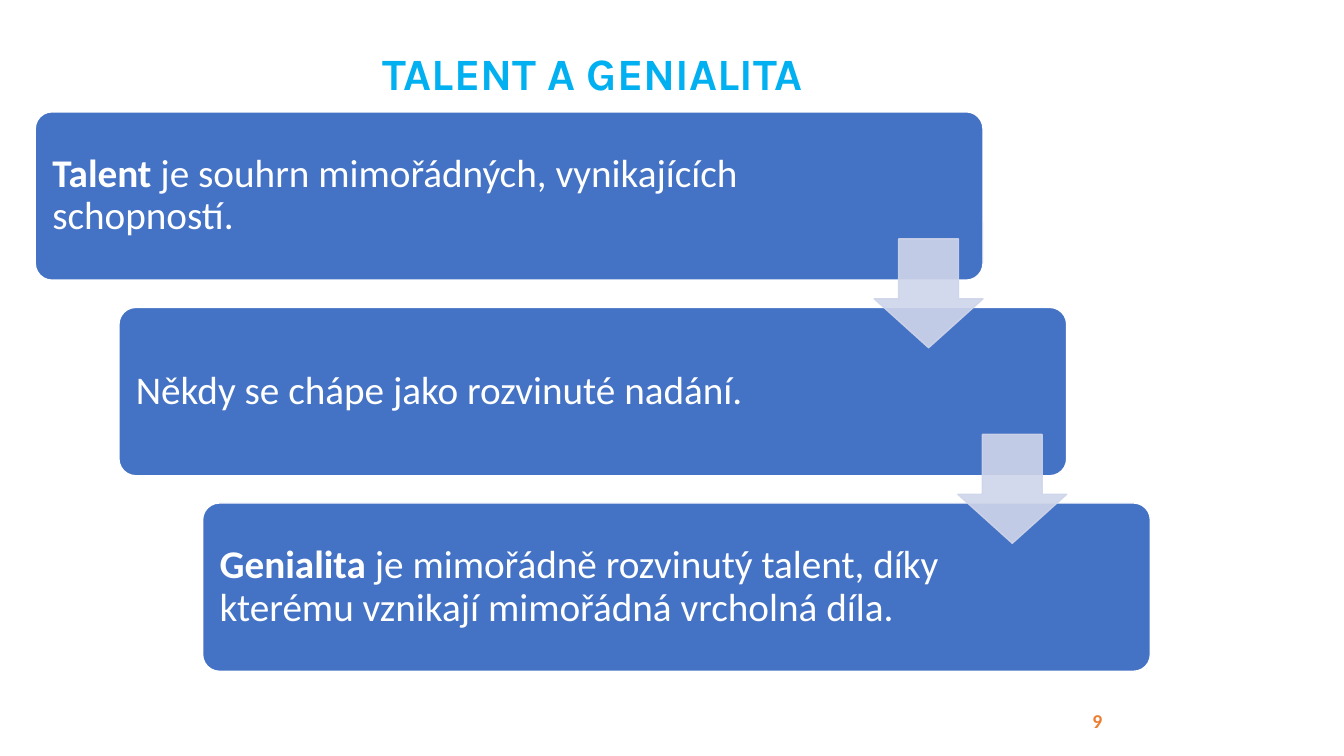
from dataclasses import dataclass

from lxml.etree import SubElement
from pptx import Presentation
from pptx.dml.color import RGBColor
from pptx.enum.shapes import MSO_SHAPE
from pptx.enum.text import MSO_ANCHOR, PP_ALIGN
from pptx.oxml.ns import qn
from pptx.util import Inches, Pt


@dataclass(frozen=True)
class Theme:
    heading_font: str = "Karla"
    body_font: str = "Calibri"
    heading: str = "00B0F0"
    step: str = "4472C4"
    arrow: str = "CFD5EA"
    light: str = "FFFFFF"
    accent: str = "ED7D31"
    heading_size: int = 32
    body_size: int = 28
    number_size: int = 14


class StaircaseSlide:
    def __init__(self, deck, theme):
        self.theme = theme
        self.page = deck.slides.add_slide(deck.slide_layouts[5])

    def add_span(self, para, text, font, size, color, bold=False):
        span = para.add_run()
        span.text = text
        span.font.name = font
        span.font.size = Pt(size)
        span.font.bold = bold
        span.font.color.rgb = RGBColor.from_string(color)

    def add_title(self, text, left, top, width, height):
        title = self.page.shapes.title
        title.left, title.top = Inches(left), Inches(top)
        title.width, title.height = Inches(width), Inches(height)
        title.text_frame.vertical_anchor = MSO_ANCHOR.MIDDLE
        para = title.text_frame.paragraphs[0]
        para.alignment = PP_ALIGN.CENTER
        para.line_spacing = 0.9
        self.add_span(para, text, self.theme.heading_font,
                      self.theme.heading_size, self.theme.heading, True)

    def add_block(self, kind, left, top, width, height, adjustments, fill, line):
        block = self.page.shapes.add_shape(
            kind, Inches(left), Inches(top), Inches(width), Inches(height))
        for index, value in enumerate(adjustments):
            block.adjustments[index] = value
        block.shadow.inherit = False
        block.fill.solid()
        block.fill.fore_color.rgb = RGBColor.from_string(fill)
        block.line.color.rgb = RGBColor.from_string(line)
        block.line.width = Pt(1)
        return block

    def add_step(self, spans, left, top, width, height):
        step = self.add_block(MSO_SHAPE.ROUNDED_RECTANGLE, left, top, width, height,
                              [0.1], self.theme.step, self.theme.light)
        frame = step.text_frame
        frame.word_wrap = True
        frame.vertical_anchor = MSO_ANCHOR.MIDDLE
        frame.margin_left, frame.margin_right = Inches(0.12), Inches(1.95)
        para = frame.paragraphs[0]
        para.alignment = PP_ALIGN.LEFT
        para.line_spacing = 0.9
        for text, bold in spans:
            self.add_span(para, text, self.theme.body_font,
                          self.theme.body_size, self.theme.light, bold)

    def add_arrow(self, left, top, size):
        """Draw a down arrow, 90 % opaque in fill and outline."""
        arrow = self.add_block(MSO_SHAPE.DOWN_ARROW, left, top, size, size,
                               [0.55, 0.45], self.theme.arrow, self.theme.arrow)
        for color in arrow.element.spPr.iter(qn("a:srgbClr")):
            SubElement(color, qn("a:alpha"), val="90000")

    def add_page_number(self, text, left, top, width, height):
        box = self.page.shapes.add_textbox(
            Inches(left), Inches(top), Inches(width), Inches(height))
        box.text_frame.word_wrap = True
        box.text_frame.vertical_anchor = MSO_ANCHOR.MIDDLE
        para = box.text_frame.paragraphs[0]
        para.alignment = PP_ALIGN.RIGHT
        self.add_span(para, text, self.theme.body_font,
                      self.theme.number_size, self.theme.accent, True)


STEPS = [
    [("Talent", True), (" je souhrn mimořádných, vynikajících schopností.", False)],
    [("Někdy se chápe jako rozvinuté nadání.", False)],
    [("Genialita", True),
     (" je mimořádně rozvinutý talent, díky kterému vznikají mimořádná vrcholná díla.",
      False)],
]
SHIFT_RIGHT, SHIFT_DOWN = 0.83, 1.94


def main():
    deck = Presentation()
    deck.slide_width, deck.slide_height = Inches(13.33), Inches(7.5)
    slide = StaircaseSlide(deck, Theme())
    slide.add_title("TALENT A GENIALITA", 0.35, 0.4, 11.06, 0.71)
    for index, spans in enumerate(STEPS):
        slide.add_step(spans, 0.35 + index * SHIFT_RIGHT, 1.11 + index * SHIFT_DOWN,
                       9.4, 1.67)
    for index in range(len(STEPS) - 1):
        slide.add_arrow(8.67 + index * SHIFT_RIGHT, 2.37 + index * SHIFT_DOWN, 1.08)
    slide.add_page_number("9", 10.34, 6.95, 0.69, 0.4)
    deck.save("out.pptx")


if __name__ == "__main__":
    main()
